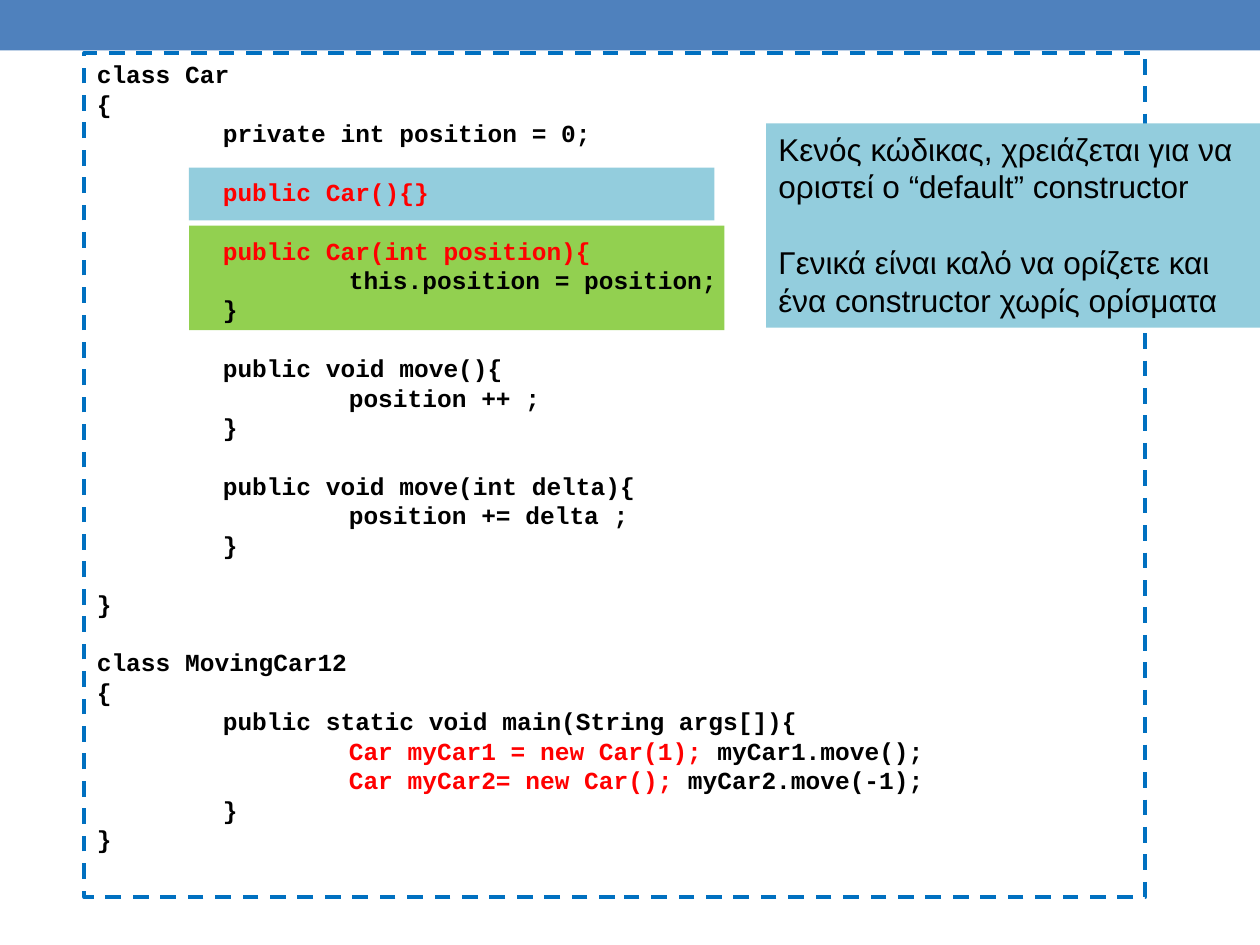
from pptx import Presentation
from pptx.dml.color import RGBColor
from pptx.enum.dml import MSO_LINE
from pptx.enum.shapes import MSO_SHAPE
from pptx.enum.text import MSO_ANCHOR, PP_ALIGN
from pptx.util import Inches, Pt

RECTANGLE = MSO_SHAPE.RECTANGLE
DASH = MSO_LINE.DASH
TOP = MSO_ANCHOR.TOP
LEFT = PP_ALIGN.LEFT

THEME = {
    "bar": "4F81BD", "green": "92D050", "blue": "93CDDD", "frame": "0070C0",
    "text": "000000", "accent": "FF0000",
    "code_font": "Courier New", "code_size": 14,
    "note_font": "Arial", "note_size": 18,
    "line_height": 1.2, "indent": 1,
}

# Each block is a list of lines: indent depth, then the pieces of text.
# A piece in a tuple is highlighted; blocks are one line apart.
CODE = [
    [(0, "class Car"), (0, "{"), (1, "private int position = 0;")],
    [(1, ("public Car(){}",))],
    [(1, ("public Car(int position){",)),
     (2, "this.position = position;"), (1, "}")],
    [(1, "public void move(){"), (2, "position ++ ;"), (1, "}")],
    [(1, "public void move(int delta){"), (2, "position += delta ;"), (1, "}")],
    [(0, "}")],
    [(0, "class MovingCar12"), (0, "{"),
     (1, "public static void main(String args[]){"),
     (2, ("Car myCar1 = new Car(1); ",), "myCar1.move();"),
     (2, ("Car myCar2= new Car(); ",), "myCar2.move(-1);"),
     (1, "}"), (0, "}")],
]
NOTE = [
    [(0, "Κενός κώδικας, χρειάζεται για να οριστεί ο “default” constructor")],
    [(0, "Γενικά είναι καλό να ορίζετε και ένα constructor χωρίς ορίσματα")],
]

# left, top, width, height in inches
BAR = (0, 0, 10, 0.4)
CONSTRUCTOR_BAND = (1.5, 1.79, 4.25, 0.83)
DEFAULT_BAND = (1.5, 1.33, 4.17, 0.42)
CODE_FRAME = (0.67, 0.42, 8.42, 6.7)
NOTE_BOX = (6.08, 0.98, 3.92, 1.62)


def color(name):
    return RGBColor.from_string(THEME[name])


def add_rectangle(slide, box, fill=None, line=None):
    shape = slide.shapes.add_shape(RECTANGLE, *map(Inches, box))
    shape.shadow.inherit = False
    if fill:
        shape.fill.solid()
        shape.fill.fore_color.rgb = color(fill)
    else:
        shape.fill.background()
    if line:
        shape.line.color.rgb = color(line)
        shape.line.width = Pt(2.25)
        shape.line.dash_style = DASH
    else:
        shape.line.fill.background()
    return shape


def write_text(shape, blocks, font, size, bold=False):
    frame = shape.text_frame
    frame.word_wrap = True
    frame.vertical_anchor = TOP
    pitch = Pt(size * THEME["line_height"])
    paragraph = None
    for block in blocks:
        for index, (depth, *pieces) in enumerate(block):
            first = paragraph is None
            paragraph = frame.paragraphs[0] if first else frame.add_paragraph()
            paragraph.alignment = LEFT
            paragraph.line_spacing = pitch
            paragraph.space_before = pitch if index == 0 and not first else Pt(0)
            left_margin = Inches(depth * THEME["indent"])
            paragraph._p.get_or_add_pPr().set("marL", str(left_margin))
            for piece in pieces:
                highlighted = isinstance(piece, tuple)
                run = paragraph.add_run()
                run.text = piece[0] if highlighted else piece
                run.font.name = font
                run.font.size = Pt(size)
                run.font.bold = bold
                run.font.color.rgb = color("accent" if highlighted else "text")


def main():
    presentation = Presentation()
    presentation.slide_width, presentation.slide_height = Inches(10), Inches(7.5)
    slide = presentation.slides.add_slide(presentation.slide_layouts[6])

    add_rectangle(slide, BAR, fill="bar")
    add_rectangle(slide, CONSTRUCTOR_BAND, fill="green")
    add_rectangle(slide, DEFAULT_BAND, fill="blue")
    code_frame = add_rectangle(slide, CODE_FRAME, line="frame")
    write_text(code_frame, CODE, THEME["code_font"], THEME["code_size"], bold=True)
    note_box = add_rectangle(slide, NOTE_BOX, fill="blue")
    write_text(note_box, NOTE, THEME["note_font"], THEME["note_size"])

    presentation.save("out.pptx")


if __name__ == "__main__":
    main()
